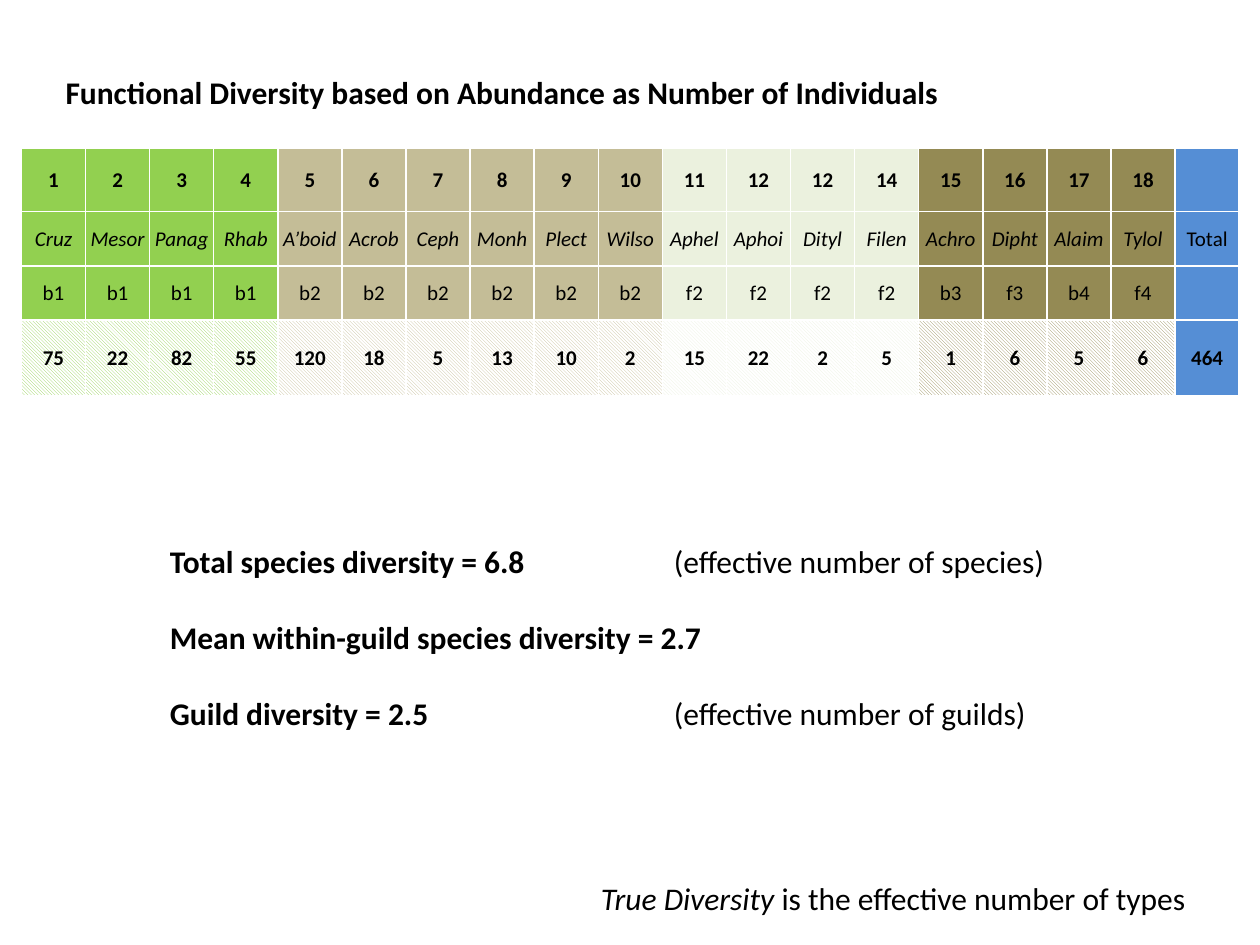
from lxml.etree import SubElement
from pptx import Presentation
from pptx.dml.color import RGBColor
from pptx.enum.dml import MSO_PATTERN
from pptx.enum.text import MSO_ANCHOR, MSO_AUTO_SIZE, PP_ALIGN
from pptx.oxml.ns import qn
from pptx.util import Inches, Pt

BLACK = RGBColor(0x00, 0x00, 0x00)
WHITE = RGBColor(0xFF, 0xFF, 0xFF)
GREEN = RGBColor(0x92, 0xD0, 0x50)
TAN = RGBColor(0xC4, 0xBD, 0x97)
PALE = RGBColor(0xEB, 0xF1, 0xDE)
OLIVE = RGBColor(0x94, 0x8A, 0x54)
BLUE = RGBColor(0x55, 0x8E, 0xD5)

TITLE = "Functional Diversity based on Abundance as Number of Individuals"

# Guild colour, then its taxa: number, name, guild, abundance
GUILDS = [
    (GREEN, [("1", "Cruz", "b1", "75"), ("2", "Mesor", "b1", "22"),
             ("3", "Panag", "b1", "82"), ("4", "Rhab", "b1", "55")]),
    (TAN, [("5", "A’boid", "b2", "120"), ("6", "Acrob", "b2", "18"),
           ("7", "Ceph", "b2", "5"), ("8", "Monh", "b2", "13"),
           ("9", "Plect", "b2", "10"), ("10", "Wilso", "b2", "2")]),
    (PALE, [("11", "Aphel", "f2", "15"), ("12", "Aphoi", "f2", "22"),
            ("12", "Dityl", "f2", "2"), ("14", "Filen", "f2", "5")]),
    (OLIVE, [("15", "Achro", "b3", "1"), ("16", "Dipht", "f3", "6"),
             ("17", "Alaim", "b4", "5"), ("18", "Tylol", "f4", "6")]),
    (BLUE, [("", "Total", "", "464")]),
]
ROW_HEIGHTS = [0.5, 0.43, 0.43, 0.6]
NAME_ROW, ABUNDANCE_ROW = 1, 3
BOLD_ROWS = (0, ABUNDANCE_ROW)

RESULTS = [
    ("Total species diversity = 6.8", "(effective number of species)"),
    ("Mean within-guild species diversity = 2.7", ""),
    ("Guild diversity = 2.5", "(effective number of guilds)"),
]
DEFINITION = ("True Diversity ", "is the effective number of types")


def write(paragraph, text, *, size=18, bold=False, italic=False):
    run = paragraph.add_run()
    run.text = text
    run.font.name = "Calibri"
    run.font.size = Pt(size)
    run.font.bold = bold
    run.font.italic = italic
    run.font.color.rgb = BLACK


def place(shape, left, top, width, height):
    shape.left, shape.top = Inches(left), Inches(top)
    shape.width, shape.height = Inches(width), Inches(height)


def add_box(slide, *position):
    box = slide.shapes.add_textbox(*map(Inches, position))
    box.text_frame.word_wrap = False
    return box.text_frame


def add_borders(cell):
    properties = cell._tc.get_or_add_tcPr()
    for side in ("a:lnL", "a:lnR", "a:lnT", "a:lnB"):
        line = SubElement(properties, qn(side), w=str(Pt(1)))
        solid = SubElement(line, qn("a:solidFill"))
        SubElement(solid, qn("a:srgbClr"), val=str(WHITE))


def fill_cell(cell, color, hatched):
    if hatched:
        cell.fill.patterned()
        cell.fill.pattern = MSO_PATTERN.LIGHT_DOWNWARD_DIAGONAL
        cell.fill.fore_color.rgb = color
        cell.fill.back_color.rgb = WHITE
    else:
        cell.fill.solid()
        cell.fill.fore_color.rgb = color


def add_taxa_table(slide):
    columns = [(color, taxon) for color, taxa in GUILDS for taxon in taxa]
    table = slide.shapes.add_table(
        len(ROW_HEIGHTS), len(columns), Inches(0.17), Inches(1.18),
        Inches(9.67), Inches(sum(ROW_HEIGHTS))).table
    table.first_row = table.horz_banding = False
    for row, height in zip(table.rows, ROW_HEIGHTS):
        row.height = Inches(height)
    for c, (color, taxon) in enumerate(columns):
        is_total = color == BLUE
        for r, text in enumerate(taxon):
            cell = table.cell(r, c)
            cell.vertical_anchor = MSO_ANCHOR.MIDDLE
            cell.margin_left = cell.margin_right = cell.margin_top = Inches(0.01)
            cell.margin_bottom = 0
            add_borders(cell)
            fill_cell(cell, color, r == ABUNDANCE_ROW and not is_total)
            if text:
                paragraph = cell.text_frame.paragraphs[0]
                paragraph.alignment = PP_ALIGN.CENTER
                write(paragraph, text, size=12, bold=r in BOLD_ROWS,
                      italic=r == NAME_ROW and not is_total)


def add_results(slide):
    frame = add_box(slide, 1.25, 4.25, 7.22, 1.62)
    for i, (result, note) in enumerate(RESULTS):
        paragraph = frame.paragraphs[0] if i == 0 else frame.add_paragraph()
        if i:
            paragraph.space_before = Pt(22)
        tabs = SubElement(paragraph._p.get_or_add_pPr(), qn("a:tabLst"))
        SubElement(tabs, qn("a:tab"), pos=str(Inches(4)), algn="l")
        write(paragraph, result, bold=True)
        if note:
            write(paragraph, "\t" + note)


def main():
    deck = Presentation()
    deck.slide_width, deck.slide_height = Inches(10), Inches(7.5)
    slide = deck.slides.add_slide(deck.slide_layouts[5])

    title = slide.shapes.title
    place(title, 0.42, 0.53, 7.18, 0.4)
    title.text_frame.word_wrap = False
    title.text_frame.auto_size = MSO_AUTO_SIZE.NONE
    title.text_frame.vertical_anchor = MSO_ANCHOR.TOP
    heading = title.text_frame.paragraphs[0]
    heading.alignment = PP_ALIGN.LEFT
    write(heading, TITLE, bold=True)

    add_taxa_table(slide)
    add_results(slide)

    term, meaning = DEFINITION
    definition = add_box(slide, 4.67, 6.93, 4.91, 0.4).paragraphs[0]
    write(definition, term, italic=True)
    write(definition, meaning)

    deck.save("out.pptx")


if __name__ == "__main__":
    main()
